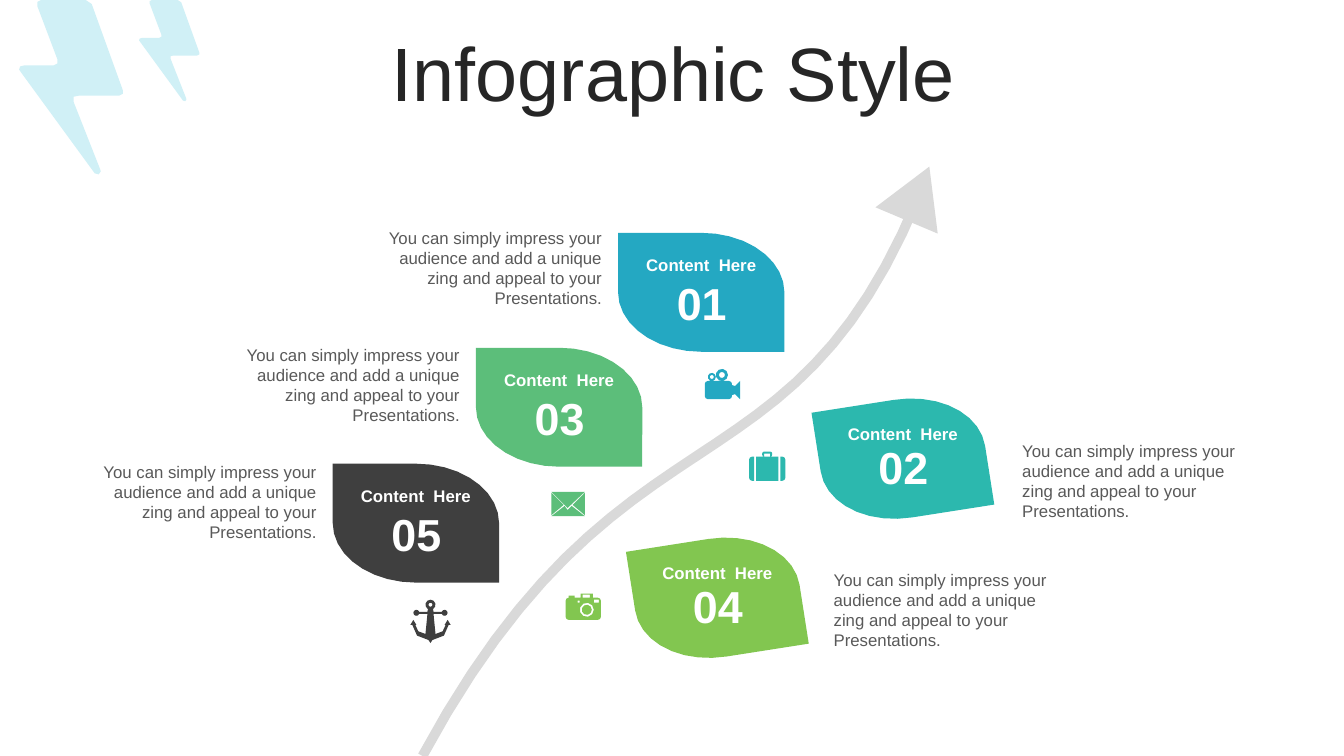
from dataclasses import dataclass
from math import cos, radians, sin

from pptx import Presentation
from pptx.dml.color import RGBColor
from pptx.enum.shapes import MSO_SHAPE as Preset
from pptx.enum.text import MSO_ANCHOR as Anchor, PP_ALIGN as Align
from pptx.util import Inches, Pt

Point = tuple[float, float]
Contour = list[Point]

FONT = "Arial"
WHITE, DARK, GREY, TRAIL, BOLT = "FFFFFF", "262626", "595959", "D9D9D9", "D0F0F6"
LEAF_WIDTH, LEAF_HEIGHT, TILT = 1.65, 1.18, 351.1
DESCRIPTION = ("You can simply impress your audience and add a unique "
               "zing and appeal to your Presentations.")


# Outlines, in inches
def arc(x: float, y: float, rx: float, ry: float, start: int, end: int) -> Contour:
    """Points on an ellipse; angles run clockwise from the right."""
    if not rx:
        return [(x, y)]
    steps = round(abs(end - start) / (10 if rx > 0.5 else 40))
    angles = [radians(start + (end - start) * i / steps) for i in range(steps + 1)]
    return [(x + rx * cos(a), y + ry * sin(a)) for a in angles]


def circle(x: float, y: float, radius: float) -> Contour:
    return arc(x, y, radius, radius, 0, 360)[:-1]


def box(left: float, top: float, right: float, bottom: float,
        left_radius: float = 0, right_radius: float = 0) -> Contour:
    a, b = left_radius, right_radius
    return (arc(left + a, top + a, a, a, 180, 270)
            + arc(right - b, top + b, b, b, 270, 360)
            + arc(right - b, bottom - b, b, b, 0, 90)
            + arc(left + a, bottom - a, a, a, 90, 180))


def leaf(left: float, top: float) -> Contour:
    rx, ry = LEAF_WIDTH / 2, LEAF_HEIGHT / 2
    x, y = left + rx, top + ry
    return ([(left, top)] + arc(x, y, rx, ry, 270, 360)
            + [(left + LEAF_WIDTH, top + LEAF_HEIGHT)] + arc(x, y, rx, ry, 90, 180))


def bezier(p0: Point, p1: Point, p2: Point, p3: Point, steps: int = 24) -> Contour:
    def at(t: float, axis: int) -> float:
        u = 1 - t
        return (u ** 3 * p0[axis] + 3 * u * u * t * p1[axis]
                + 3 * u * t * t * p2[axis] + t ** 3 * p3[axis])
    return [(at(i / steps, 0), at(i / steps, 1)) for i in range(steps + 1)]


def anchor(x: float) -> list[Contour]:
    half = (arc(0, 6, 0.05, 0.05, -90, 60) + [(0.03, 6.07), (0.11, 6.07)]
            + arc(0.14, 6.08, 0.03, 0.03, -160, 160) + [(0.11, 6.09), (0.03, 6.09)]
            + arc(0.05, 6.2, 0.1, 0.09, 90, 0)
            + [(0.14, 6.2), (0.17, 6.15), (0.2, 6.2)]
            + arc(0.02, 6.2, 0.16, 0.15, 0, 90) + [(0, 6.38)])
    outline = [(x + dx, y) for dx, y in half] + [(x - dx, y) for dx, y in half[-2:0:-1]]
    return [outline, circle(x, 6, 0.02)]


BOLT_OUTLINE = [
    (0.22, 0), (0.66, 0), (0.72, 0.04), (1.03, 0.9), (1.03, 0.93), (0.99, 0.95),
    (0.59, 0.95), (0.54, 0.96), (0.54, 1.01), (0.8, 1.67), (0.81, 1.7), (0.79, 1.73),
    (0.75, 1.72), (0.02, 0.72), (0, 0.69), (0.01, 0.66), (0.05, 0.65), (0.34, 0.65),
    (0.38, 0.63), (0.38, 0.59), (0.18, 0.06), (0.18, 0.02)]
VIDEO = [
    box(6.99, 3.78, 7.26, 3.96, 0.03, 0.03),
    circle(7.16, 3.72, 0.06), circle(7.16, 3.72, 0.03),
    circle(7.06, 3.74, 0.04), circle(7.06, 3.74, 0.02),
    [(7.26, 3.82), (7.29, 3.83), (7.34, 3.78), (7.34, 3.96), (7.29, 3.91), (7.26, 3.92)]]
SUITCASE = [
    box(7.43, 4.53, 7.48, 4.77, left_radius=0.03),
    box(7.5, 4.53, 7.72, 4.77),
    box(7.74, 4.53, 7.79, 4.77, right_radius=0.03),
    box(7.56, 4.48, 7.66, 4.53, 0.02, 0.02), box(7.58, 4.5, 7.64, 4.53)]
ENVELOPE = [
    [(5.47, 4.88), (5.8, 4.88), (5.63, 5.04)],
    [(5.47, 4.89), (5.59, 5.01), (5.47, 5.11)],
    [(5.8, 4.89), (5.8, 5.11), (5.68, 5.01)],
    [(5.67, 5.02), (5.8, 5.12), (5.47, 5.12), (5.6, 5.02), (5.63, 5.06)]]
CAMERA = [
    box(5.61, 5.93, 5.96, 6.15, 0.03, 0.03),
    circle(5.82, 6.05, 0.07), circle(5.82, 6.05, 0.05),
    box(5.73, 5.96, 5.75, 5.98), box(5.89, 5.95, 5.94, 5.98),
    box(5.76, 5.89, 5.88, 5.93), box(5.78, 5.9, 5.85, 5.93),
    box(5.64, 5.91, 5.7, 5.93)]


@dataclass
class Step:
    number: str
    color: str
    left: float
    top: float
    description_left: float
    description_top: float
    icon: list[Contour]
    tilted: bool = False


STEPS = [
    Step("04", "82C650", 6.29, 5.34, 8.17, 5.6, CAMERA, tilted=True),
    Step("02", "2CB8AE", 8.13, 3.96, 10.04, 4.32, SUITCASE, tilted=True),
    Step("05", "3F3F3F", 3.3, 4.6, 0.88, 4.53, anchor(4.27)),
    Step("03", "5CBE7A", 4.72, 3.45, 2.3, 3.37, ENVELOPE),
    Step("01", "24A8C2", 6.13, 2.31, 3.71, 2.21, VIDEO),
]


# Drawing
def rgb(color: str) -> RGBColor:
    return RGBColor.from_string(color)


def paint(shape, color: str):
    shape.shadow.inherit = False
    shape.fill.solid()
    shape.fill.fore_color.rgb = rgb(color)
    shape.line.fill.background()
    return shape


def draw_outline(shapes, contours: list[Contour], closed: bool = True):
    scaled = [[(Inches(x), Inches(y)) for x, y in contour] for contour in contours]
    builder = shapes.build_freeform(*scaled[0][0])
    for index, contour in enumerate(scaled):
        if index:
            builder.move_to(*contour[0])
        builder.add_line_segments(contour[1:], close=closed)
    return builder.convert_to_shape()


def write(frame, text: str, size: int, color: str, align: Align,
          bold: bool = False, middle: bool = False) -> None:
    frame.text = text
    frame.word_wrap = True
    frame.vertical_anchor = Anchor.MIDDLE if middle else Anchor.TOP
    paragraph = frame.paragraphs[0]
    paragraph.alignment = align
    font = paragraph.runs[0].font
    font.name, font.size, font.bold = FONT, Pt(size), bold
    font.color.rgb = rgb(color)


def add_text(shapes, left: float, top: float, width: float, height: float,
             text: str, size: int, color: str, align: Align, **style: bool) -> None:
    text_box = shapes.add_textbox(Inches(left), Inches(top), Inches(width), Inches(height))
    write(text_box.text_frame, text, size, color, align, **style)


def add_label(shapes, step: Step) -> None:
    group = shapes.add_group_shape().shapes
    left = step.left + 0.05
    top = step.top + (0.19 if step.tilted else 0.17)
    number_top = top + (0.16 if step.tilted else 0.2)
    add_text(group, left + 0.42, number_top, 0.72, 0.64, step.number, 32, WHITE,
             Align.CENTER, bold=True, middle=True)
    add_text(group, left, top, 1.55, 0.3, "Content  Here", 12, WHITE,
             Align.CENTER, bold=True)


def main() -> None:
    presentation = Presentation()
    presentation.slide_width, presentation.slide_height = Inches(13.33), Inches(7.5)
    slide = presentation.slides.add_slide(presentation.slide_layouts[5])
    shapes = slide.shapes

    # Corner bolts
    for left, scale in ((0.19, 1), (1.38, 0.58)):
        outline = [(left + x * scale, y * scale) for x, y in BOLT_OUTLINE]
        paint(draw_outline(shapes, [outline]), BOLT)

    # Title
    title = shapes.title
    title.left, title.top = Inches(0.35), Inches(0.37)
    title.width, title.height = Inches(12.66), Inches(0.79)
    write(title.text_frame, "Infographic Style", 54, DARK, Align.CENTER, middle=True)
    title.text_frame.paragraphs[0].line_spacing = 0.9

    # Leaves
    for step in STEPS:
        shape = paint(draw_outline(shapes, [leaf(step.left, step.top)]), step.color)
        shape.rotation = TILT if step.tilted else 0

    # Rising trail and its head
    curve = bezier((4.19, 7.5), (6.15, 3.87), (7.83, 5.05), (9.11, 1.95))
    trail = draw_outline(shapes, [curve], closed=False)
    trail.shadow.inherit = False
    trail.fill.background()
    trail.line.color.rgb, trail.line.width = rgb(TRAIL), Pt(7)
    head = shapes.add_shape(Preset.ISOSCELES_TRIANGLE, Inches(8.77), Inches(1.63),
                            Inches(0.67), Inches(0.58))
    paint(head, TRAIL).rotation = 22.9

    # Labels, descriptions and icons
    for step in STEPS:
        add_label(shapes, step)
        add_text(shapes, step.description_left, step.description_top, 2.36, 0.91,
                 DESCRIPTION, 12, GREY, Align.LEFT if step.tilted else Align.RIGHT)
        paint(draw_outline(shapes, step.icon), step.color)

    presentation.save("out.pptx")


if __name__ == "__main__":
    main()
